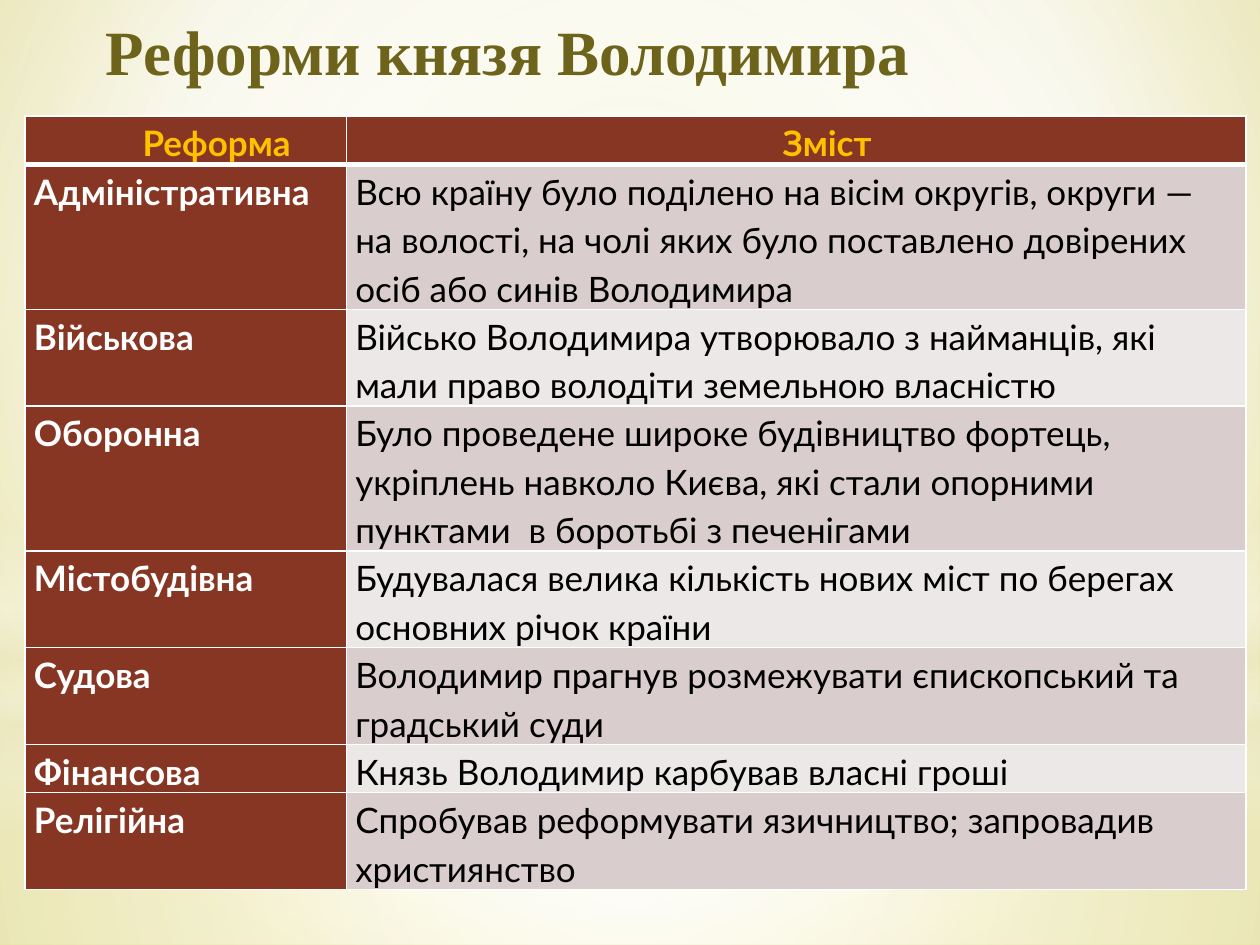
import pptx
import pptx.dml.color
import pptx.enum.shapes
import pptx.enum.text
import pptx.oxml
import pptx.oxml.ns
import pptx.util
from pptx.util import Inches

COLORS = {
    "olive": "6D631B", "brown": "873624", "gold": "FFC000", "white": "FFFFFF",
    "black": "000000", "dark band": "D9CECD", "light band": "EDE8E8",
    "cream": "ECE9C6", "straw": "ECE8B4", "yellow": "E7DE77",
}
HEADINGS = ("Реформа", "Зміст")
REFORMS = [
    ("Адміністративна", "Всю країну було поділено на вісім округів, округи — на волості, "
     "на чолі яких було поставлено довірених осіб або синів Володимира", 3),
    ("Військова", "Військо Володимира утворювало з найманців, які мали право володіти "
     "земельною власністю", 2),
    ("Оборонна", "Було проведене широке будівництво фортець, укріплень навколо Києва, "
     "які стали опорними пунктами  в боротьбі з печенігами", 3),
    ("Містобудівна", "Будувалася велика кількість нових міст по берегах основних річок "
     "країни", 2),
    ("Судова", "Володимир прагнув розмежувати єпископський та градський суди", 2),
    ("Фінансова", "Князь Володимир карбував власні гроші", 1),
    ("Релігійна", "Спробував реформувати язичництво; запровадив християнство", 2),
]
CENTER = (50, 50, 50, 50)
LINE_HEIGHT = 0.38


def rgb(name):
    """Return the named colour."""
    return pptx.dml.color.RGBColor.from_string(COLORS[name])


def set_gradient(parent, stops, focus=None):
    """Replace the solid fill in parent with a circular or vertical gradient."""
    stop_xml = "".join(
        f'<a:gs pos="{position * 1000}"><a:srgbClr val="{COLORS[color]}">'
        f'<a:alpha val="{opacity * 1000}"/></a:srgbClr></a:gs>'
        for position, color, opacity in stops)
    if focus:
        left, top, right, bottom = (side * 1000 for side in focus)
        direction = (f'<a:path path="circle"><a:fillToRect l="{left}" t="{top}" '
                     f'r="{right}" b="{bottom}"/></a:path>')
    else:
        direction = '<a:lin ang="5400000" scaled="0"/>'
    gradient = pptx.oxml.parse_xml(
        f'<a:gradFill {pptx.oxml.ns.nsdecls("a")} rotWithShape="1">'
        f'<a:gsLst>{stop_xml}</a:gsLst>{direction}</a:gradFill>')
    parent.replace(parent.find(pptx.oxml.ns.qn("a:solidFill")), gradient)


def add_glow(slide, box, stops, focus=None, oval=False):
    """Add a translucent gradient shape in the box."""
    kinds = pptx.enum.shapes.MSO_SHAPE
    shape = slide.shapes.add_shape(kinds.OVAL if oval else kinds.RECTANGLE, *map(Inches, box))
    shape.shadow.inherit = False
    shape.line.fill.background()
    shape.fill.solid()
    set_gradient(shape.element.spPr, stops, focus)


def add_backdrop(slide, width, height):
    """Paint the background and its layers of soft light."""
    slide.background.fill.solid()
    set_gradient(slide.element.find(".//" + pptx.oxml.ns.qn("p:bgPr")),
                 [(0, "straw", 100), (60, "white", 100), (100, "yellow", 100)],
                 (20, 10, 20, 60))
    horizon = 5.58
    add_glow(slide, (0, horizon, width, height - horizon),
             [(0, "white", 91), (37, "white", 76), (100, "cream", 79)], CENTER)
    add_glow(slide, (0, 0, width, horizon),
             [(0, "white", 89), (48, "white", 62), (100, "cream", 79)], CENTER)
    add_glow(slide, (0, 4.12, width, 2.5),
             [(0, "white", 0), (29, "white", 30), (45, "cream", 40),
              (55, "white", 26), (65, "cream", 60), (100, "white", 0)])
    add_glow(slide, (0, 1.75, width, horizon),
             [(0, "white", 100), (56, "white", 0)], CENTER, oval=True)


def add_text(paragraph, text, size, font, color, bold):
    """Add one styled run to the paragraph."""
    run = paragraph.add_run()
    run.text = text
    run.font.size = pptx.util.Pt(size)
    run.font.name = font
    run.font.bold = bold
    run.font.color.rgb = rgb(color)


def add_title(slide, box):
    """Add the slide title in the box."""
    shape = slide.shapes.add_textbox(*map(Inches, box))
    shape.text_frame.word_wrap = False
    add_text(shape.text_frame.paragraphs[0], "Реформи князя Володимира",
             36, "Times New Roman", "olive", True)


def set_borders(cell, bottom):
    """Draw white cell borders, with the bottom one of the given width."""
    properties = cell._tc.get_or_add_tcPr()
    widths = {"lnL": 1, "lnR": 1, "lnT": 1, "lnB": bottom}
    for index, (side, width) in enumerate(widths.items()):
        properties.insert(index, pptx.oxml.parse_xml(
            f'<a:{side} {pptx.oxml.ns.nsdecls("a")} w="{pptx.util.Pt(width)}">'
            f'<a:solidFill><a:srgbClr val="{COLORS["white"]}"/></a:solidFill></a:{side}>'))


def fill_cell(cell, text, fill, color, bold, header=False):
    """Write and style one table cell."""
    cell.margin_left = cell.margin_right = Inches(0.07)
    cell.margin_top = cell.margin_bottom = 0
    cell.fill.solid()
    cell.fill.fore_color.rgb = rgb(fill)
    set_borders(cell, 3 if header else 1)
    paragraph = cell.text_frame.paragraphs[0]
    paragraph.line_spacing = 1.15
    if header:
        paragraph.alignment = pptx.enum.text.PP_ALIGN.CENTER
        paragraph._p.get_or_add_pPr().set("indent", str(Inches(0.49)))
    add_text(paragraph, text, 20, "Lato", color, bold)


def add_reforms(slide, left, top, column_widths):
    """Add the table of reforms, sizing each row by its lines of text."""
    line_counts = [1] + [lines for _, _, lines in REFORMS]
    frame = slide.shapes.add_table(
        len(line_counts), len(column_widths), Inches(left), Inches(top),
        Inches(sum(column_widths)), Inches(LINE_HEIGHT * sum(line_counts)))
    table = frame.table
    for column, width in zip(table.columns, column_widths):
        column.width = Inches(width)
    for row, lines in zip(table.rows, line_counts):
        row.height = Inches(LINE_HEIGHT * lines)
    for column, heading in enumerate(HEADINGS):
        fill_cell(table.cell(0, column), heading, "brown", "gold", True, header=True)
    for row, (name, content, _) in enumerate(REFORMS, start=1):
        fill_cell(table.cell(row, 0), name, "brown", "white", True)
        band = "dark band" if row % 2 else "light band"
        fill_cell(table.cell(row, 1), content, band, "black", False)


def main():
    """Build and save the presentation."""
    width, height = 10, 7.5
    presentation = pptx.Presentation()
    presentation.slide_width = Inches(width)
    presentation.slide_height = Inches(height)
    slide = presentation.slides.add_slide(presentation.slide_layouts[6])
    add_backdrop(slide, width, height)
    add_title(slide, (0.74, 0.05, 6.65, 0.71))
    add_reforms(slide, 0.2, 0.92, (2.55, 7.14))
    presentation.save("out.pptx")


if __name__ == "__main__":
    main()
